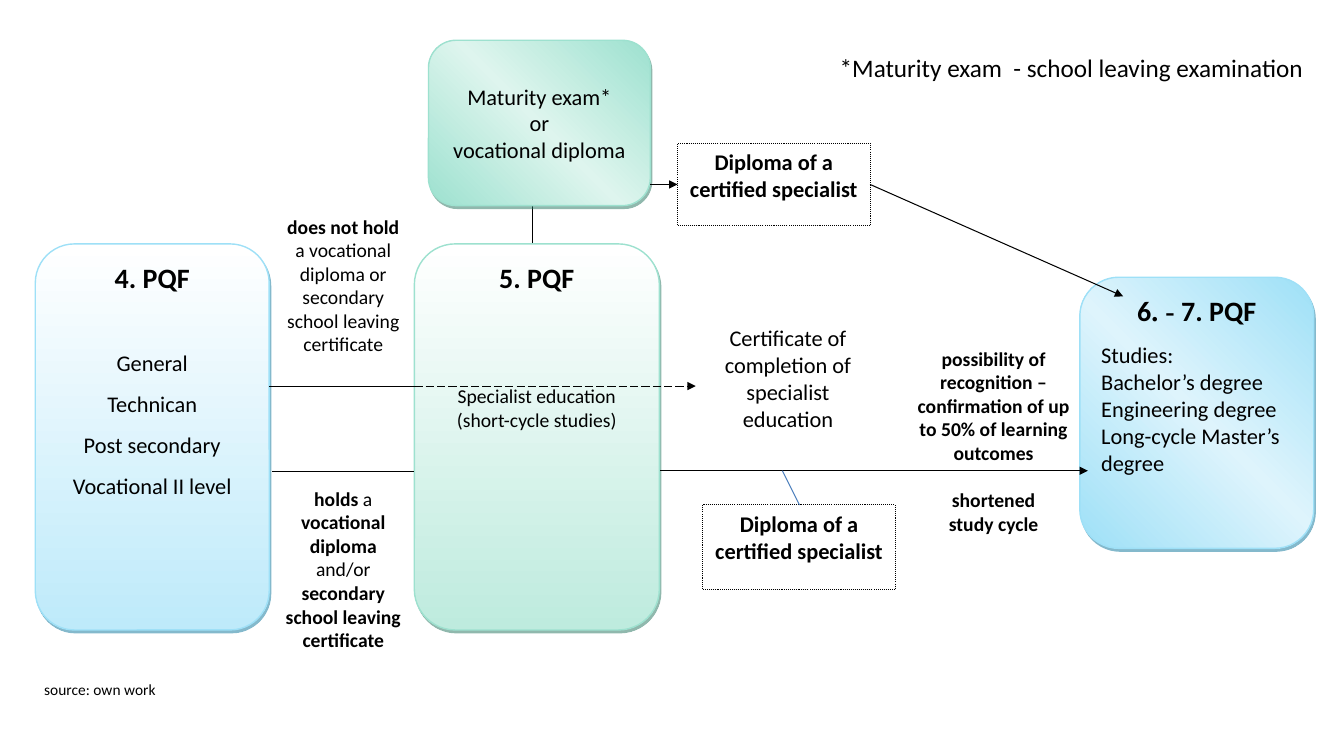
from dataclasses import dataclass

from lxml.etree import SubElement
from pptx import Presentation
from pptx.dml.color import RGBColor
from pptx.enum.dml import MSO_LINE_DASH_STYLE as Dash
from pptx.enum.shapes import MSO_CONNECTOR as Connector, MSO_SHAPE as Preset
from pptx.enum.text import MSO_ANCHOR as Anchor, PP_ALIGN as Align
from pptx.oxml import parse_xml
from pptx.oxml.ns import nsdecls, qn
from pptx.util import Inches, Pt


@dataclass(frozen=True)
class Theme:
    font: str = "Calibri"
    accent_font: str = "Times New Roman"
    ink: str = "000000"
    paper: str = "FFFFFF"
    blue: str = "9EE0F7"
    blue_pale: str = "DEF4FC"
    blue_soft: str = "BEEAFA"
    blue_shade: str = "0B759B"
    green: str = "9DE1CF"
    green_pale: str = "DEF5EE"
    green_soft: str = "BEEBDE"
    green_shade: str = "22725C"
    pointer: str = "4B7EBC"
    heading: int = 20
    remark: int = 18
    body: int = 16
    label: int = 14
    source: int = 11


@dataclass(frozen=True)
class Line:
    text: str | tuple
    size: int
    bold: bool = False
    align: Align = Align.CENTER
    after: float = 0


class Diagram:
    def __init__(self, page, theme):
        self.page = page
        self.theme = theme

    def fill_text(self, shape, lines, anchor=Anchor.TOP):
        frame = shape.text_frame
        frame.word_wrap = True
        frame.vertical_anchor = anchor
        for index, line in enumerate(lines):
            para = frame.paragraphs[0] if index == 0 else frame.add_paragraph()
            para.alignment = line.align
            para.space_after = Pt(line.after)
            if isinstance(line.text, str):
                para.text = line.text
                styles = [(line.bold, self.theme.font)] * len(para.runs)
            else:
                for text, *_ in line.text:
                    para.add_run().text = text
                styles = [style for _, *style in line.text]
            for span, (bold, font) in zip(para.runs, styles):
                span.font.name = font
                span.font.size = Pt(line.size)
                span.font.bold = bold
                span.font.color.rgb = RGBColor.from_string(self.theme.ink)

    def text(self, place, line):
        box = self.page.shapes.add_textbox(*map(Inches, place))
        self.fill_text(box, [line])

    def panel(self, place, lines, dotted=False):
        box = self.page.shapes.add_shape(Preset.RECTANGLE, *map(Inches, place))
        box.shadow.inherit = False
        box.fill.solid()
        box.fill.fore_color.rgb = RGBColor.from_string(self.theme.paper)
        if dotted:
            box.line.color.rgb = RGBColor.from_string(self.theme.ink)
            box.line.width = Pt(0.75)
            box.line.dash_style = Dash.ROUND_DOT
        else:
            box.line.fill.background()
        self.fill_text(box, lines)

    def card(self, place, colors, angle, border, shade, lines, anchor=Anchor.TOP):
        card = self.page.shapes.add_shape(Preset.ROUNDED_RECTANGLE, *map(Inches, place))
        card.adjustments[0] = 0.167
        step = 100000 // (len(colors) - 1)
        stops = "".join(
            f'<a:gs pos="{index * step}"><a:srgbClr val="{color}"/></a:gs>'
            for index, color in enumerate(colors)
        )
        properties = card._element.spPr
        properties.find(qn("a:prstGeom")).addnext(parse_xml(
            f'<a:gradFill {nsdecls("a")} rotWithShape="1"><a:gsLst>{stops}</a:gsLst>'
            f'<a:lin ang="{angle * 60000}" scaled="0"/></a:gradFill>'
        ))
        card.line.color.rgb = RGBColor.from_string(border)
        card.line.width = Pt(1)
        card.shadow.inherit = False
        properties.find(qn("a:effectLst")).append(parse_xml(
            f'<a:outerShdw {nsdecls("a")} blurRad="0" dist="{Pt(2.2)}" dir="{63 * 60000}" '
            f'algn="ctr" rotWithShape="0"><a:srgbClr val="{shade}">'
            '<a:alpha val="50000"/></a:srgbClr></a:outerShdw>'
        ))
        self.fill_text(card, lines, anchor)

    def link(self, start, end, arrow=False, dash=None, color=None):
        link = self.page.shapes.add_connector(Connector.STRAIGHT, *map(Inches, (*start, *end)))
        link.line.color.rgb = RGBColor.from_string(color or self.theme.ink)
        link.line.width = Pt(0.75)
        if dash:
            link.line.dash_style = dash
        properties = link._element.spPr
        if arrow:
            SubElement(properties.find(qn("a:ln")), qn("a:tailEnd"), type="triangle")
        SubElement(properties, qn("a:effectLst"))


def main():
    deck = Presentation()
    deck.slide_width, deck.slide_height = Inches(13.33), Inches(7.5)
    theme = Theme()
    diagram = Diagram(deck.slides.add_slide(deck.slide_layouts[6]), theme)
    plain, strong = (False, theme.font), (True, theme.font)
    upper_y, lower_y, diploma_y = 3.83, 4.68, 1.83
    diploma = [Line("Diploma of a certified specialist", theme.body, True)]

    diagram.text((0.34, 6.7, 4.5, 0.4), Line("source: own work", theme.source, align=Align.LEFT))
    diagram.link((5.28, 1.93), (5.28, 2.57))
    diagram.panel((6.97, 5.01, 1.91, 0.84), diploma, dotted=True)
    diagram.panel((6.86, 3.17, 1.91, 1.22), [
        Line("Certificate of completion of specialist education", theme.body),
    ])
    diagram.panel((2.7, 4.78, 1.41, 2.29), [Line((
        ("holds", *strong),
        (" a ", *plain),
        ("vocational diploma", *strong),
        (" and/or ", *plain),
        ("secondary school leaving certificate", *strong),
    ), theme.label)])
    diagram.panel((2.71, 2.08, 1.39, 1.29), [Line((
        ("does not hold", *strong),
        (" a vocational diploma or secondary school leaving certificate", *plain),
    ), theme.label)])
    diagram.panel((8.92, 3.39, 1.87, 2.29), [
        Line("possibility of recognition – confirmation of up to 50% of learning outcomes",
             theme.label, True, after=17),
        Line("shortened", theme.label, True),
        Line("study cycle", theme.label, True),
    ])

    levels = ("General", "Technican", "Post secondary", "Vocational II level")
    diagram.card((0.35, 2.42, 2.32, 3.83), (theme.paper, theme.blue_soft), 90,
                 theme.blue, theme.blue_shade,
                 [Line("4. PQF", theme.heading, True, after=39.5)]
                 + [Line(level, theme.body, after=10) for level in levels])
    diagram.card((4.11, 2.42, 2.43, 3.83), (theme.paper, theme.green_soft), 90,
                 theme.green, theme.green_shade, [
                     Line("5. PQF", theme.heading, True, after=64),
                     Line("Specialist education\v(short-cycle studies)", theme.label),
                 ])
    studies = ("Studies:", "Bachelor’s degree", "Engineering degree", "Long-cycle Master’s degree")
    title = (("6", *strong), (". -", True, theme.accent_font), (" 7. PQF", *strong))
    diagram.card((10.71, 2.75, 2.32, 2.69), (theme.blue, theme.blue_pale, theme.blue), 315,
                 theme.blue, theme.blue_shade,
                 [Line(title, theme.heading, after=10)]
                 + [Line(study, theme.body, align=Align.LEFT) for study in studies])
    exams = ("Maturity exam*", "or", "vocational diploma")
    diagram.card((4.25, 0.4, 2.2, 1.64), (theme.green, theme.green_pale, theme.green), 315,
                 theme.green, theme.green_shade,
                 [Line(exam, theme.body) for exam in exams], Anchor.MIDDLE)

    diagram.link((2.67, upper_y), (4.11, upper_y))
    diagram.link((2.7, lower_y), (4.11, lower_y))
    diagram.panel((6.72, 1.42, 1.91, 0.82), diploma, dotted=True)
    diagram.link((6.45, diploma_y), (6.72, diploma_y), arrow=True)
    diagram.link((6.55, 4.67), (10.79, 4.67), arrow=True)
    diagram.link((8.63, diploma_y), (11.14, 2.94), arrow=True)
    diagram.link((4.11, upper_y), (6.9, upper_y), arrow=True, dash=Dash.LONG_DASH)
    diagram.link((7.93, 5.01), (7.76, 4.67), color=theme.pointer)
    diagram.text((8.23, 0.47, 5.13, 0.4),
                 Line("*Maturity exam  - school leaving examination", theme.remark, align=Align.LEFT))
    deck.save("out.pptx")


if __name__ == "__main__":
    main()
